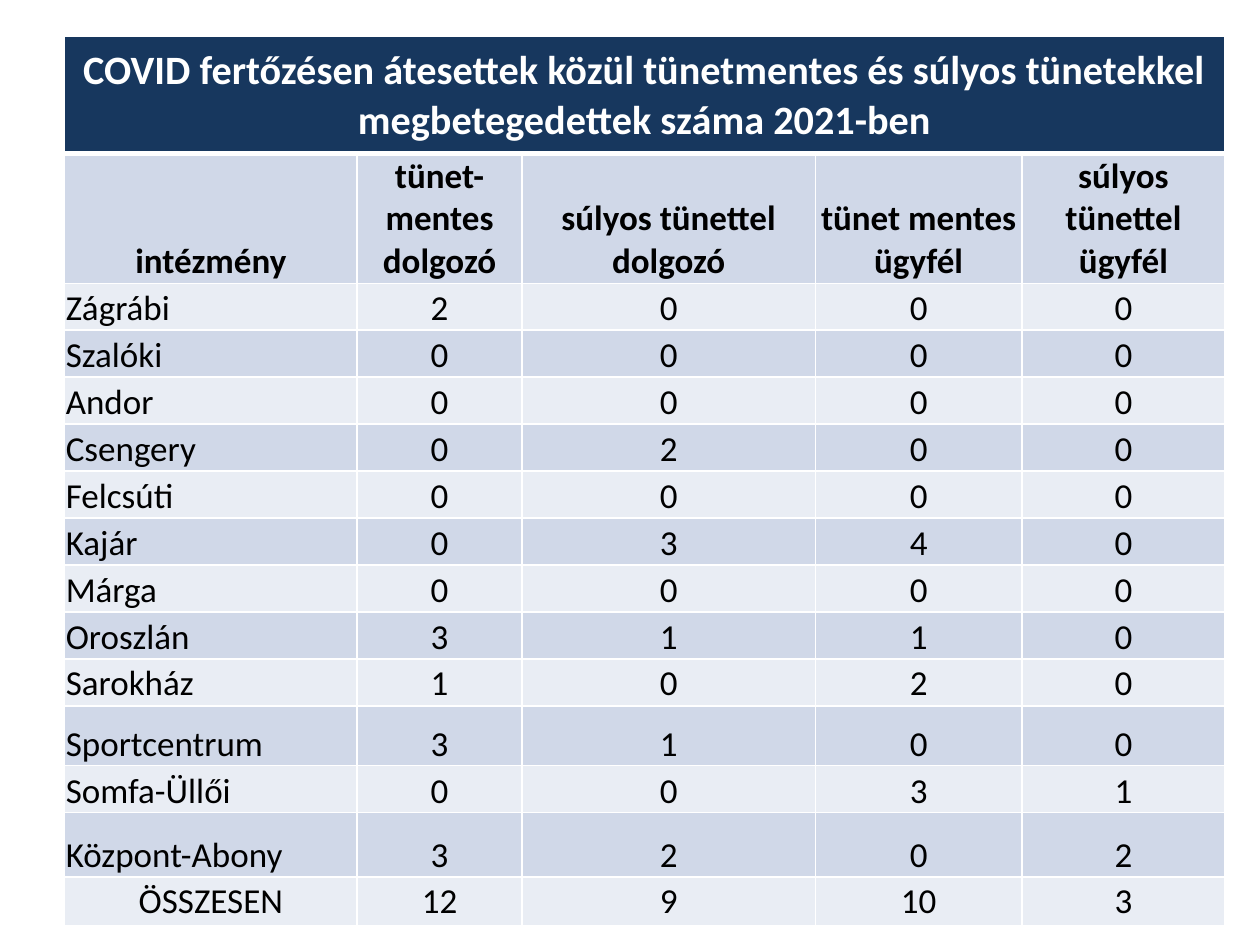
"""Build a one-slide table of symptom-free and severe COVID cases by institution."""
from lxml import etree
from pptx import Presentation
from pptx.dml.color import RGBColor
from pptx.enum import text
from pptx.oxml import ns
from pptx.util import Pt

COLORS = {"title": "17375E", "dark": "D0D8E8", "light": "E9EDF4", "white": "FFFFFF", "black": "000000"}
TITLE = "COVID fertőzésen átesettek közül tünetmentes és súlyos tünetekkel megbetegedettek száma 2021-ben"
HEADINGS = ["intézmény", "tünet-mentes dolgozó", "súlyos tünettel dolgozó", "tünet mentes ügyfél", "súlyos tünettel ügyfél"]
COUNTS = [
    ("Zágrábi", 2, 0, 0, 0),
    ("Szalóki", 0, 0, 0, 0),
    ("Andor", 0, 0, 0, 0),
    ("Csengery", 0, 2, 0, 0),
    ("Felcsúti", 0, 0, 0, 0),
    ("Kajár", 0, 3, 4, 0),
    ("Márga", 0, 0, 0, 0),
    ("Oroszlán", 3, 1, 1, 0),
    ("Sarokház", 1, 0, 2, 0),
    ("Sportcentrum", 3, 1, 0, 0),
    ("Somfa-Üllői", 0, 0, 3, 1),
    ("Központ-Abony", 3, 2, 0, 2),
    ("ÖSSZESEN", 12, 9, 10, 3),
]
ROWS = [[TITLE, "", "", "", ""], HEADINGS, *COUNTS]
WIDTHS = [167.2, 94.2, 167.6, 118.2, 115.9]
HEIGHTS = [66.8, 70.5] + [26.85] * 9 + [34, 26.85, 36.8, 27.8]
MIDDLE_ROWS = {"Sarokház", "ÖSSZESEN", TITLE}


def set_format(target, values):
    for name, value in values.items():
        setattr(target, name, value)


def add_border(cell, position, side, width):
    line = etree.Element(ns.qn(f"a:ln{side}"), w=str(Pt(width)))
    fill = etree.SubElement(line, ns.qn("a:solidFill"))
    etree.SubElement(fill, ns.qn("a:srgbClr"), val=COLORS["white"])
    cell._tc.get_or_add_tcPr().insert(position, line)


deck = Presentation()
set_format(deck, {"slide_width": Pt(720), "slide_height": Pt(540)})
page = deck.slides.add_slide(deck.slide_layouts[6])
frame = page.shapes.add_table(len(ROWS), len(WIDTHS), Pt(36.9), Pt(20.9), Pt(sum(WIDTHS)), Pt(sum(HEIGHTS)))
table = frame.table
set_format(table, {"first_row": False, "horz_banding": False})
for column, width in zip(table.columns, WIDTHS):
    column.width = Pt(width)
for row, height in zip(table.rows, HEIGHTS):
    row.height = Pt(height)

for row_index, values in enumerate(ROWS):
    is_title = row_index == 0
    shade = "title" if is_title else "dark" if row_index % 2 else "light"
    anchor = text.MSO_ANCHOR.MIDDLE if values[0] in MIDDLE_ROWS else text.MSO_ANCHOR.BOTTOM
    for column_index, value in enumerate(values):
        cell = table.cell(row_index, column_index)
        set_format(cell, {
            "margin_left": Pt(0.7), "margin_right": Pt(0.7), "margin_top": Pt(0.7), "margin_bottom": 0,
            "vertical_anchor": anchor,
        })
        cell.fill.solid()
        cell.fill.fore_color.rgb = RGBColor.from_string(COLORS[shade])
        widths = {"L": 1, "R": 1, "T": 3 if row_index == 1 else 1, "B": 3 if is_title else 1}
        for position, (side, width) in enumerate(widths.items()):
            add_border(cell, position, side, width)
        if value == "":
            continue
        is_name = column_index == 0 and row_index > 1 and value != "ÖSSZESEN"
        para = cell.text_frame.paragraphs[0]
        para.alignment = text.PP_ALIGN.LEFT if is_name else text.PP_ALIGN.CENTER
        span = para.add_run()
        span.text = str(value)
        set_format(span.font, {"name": "Calibri", "size": Pt(23 if is_title else 20), "bold": row_index < 2})
        span.font.color.rgb = RGBColor.from_string(COLORS["white" if is_title else "black"])

table.cell(0, 0).merge(table.cell(0, len(WIDTHS) - 1))
deck.save("out.pptx")
